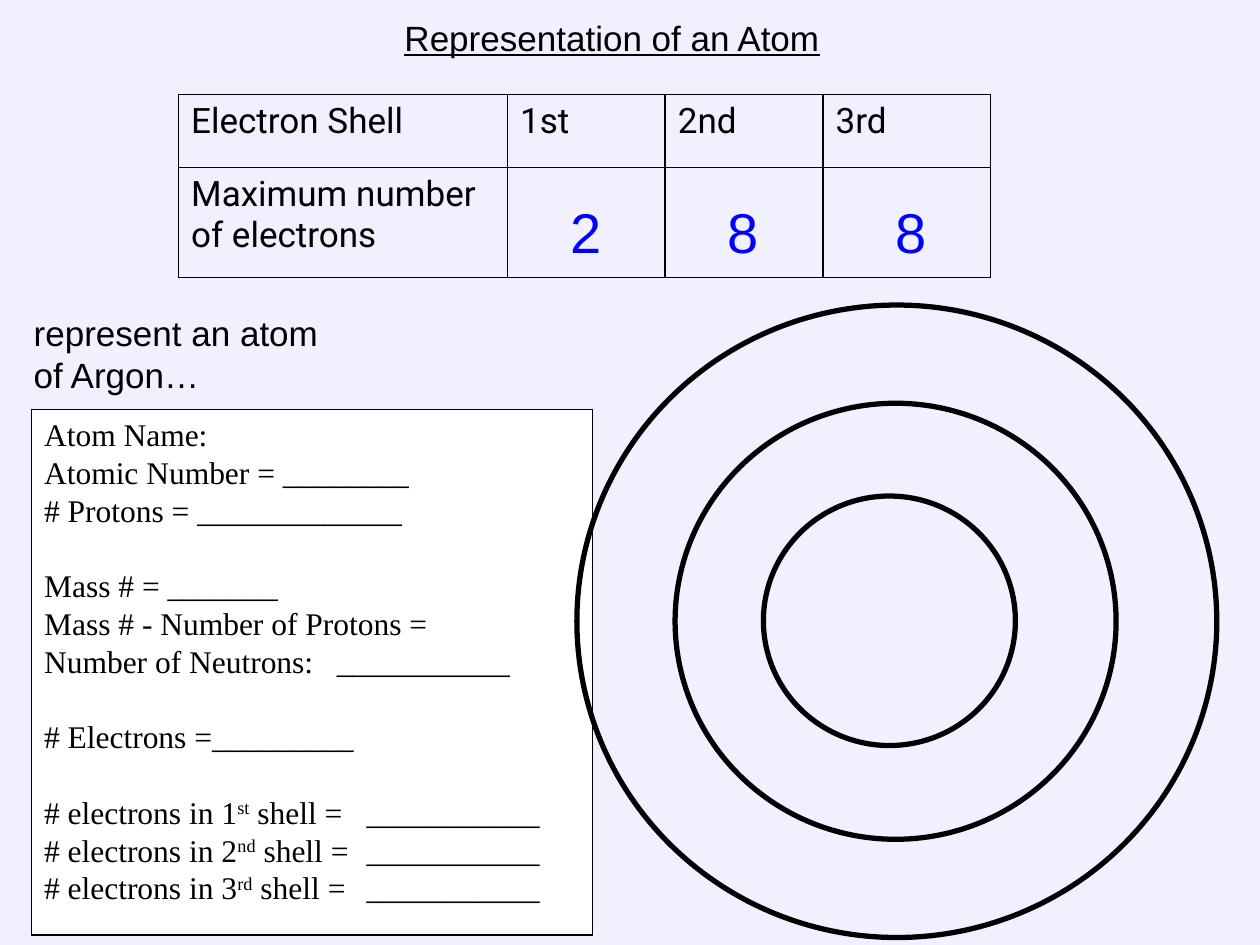
import pptx
import pptx.util
import pptx.dml.color
import pptx.enum.shapes
import pptx.enum.text
import pptx.oxml.ns
import lxml.etree as etree

Cm, Pt = pptx.util.Cm, pptx.util.Pt
SHAPE = pptx.enum.shapes.MSO_SHAPE
INK, BLUE = "000000", "0000FF"


def tint(code):
    return pptx.dml.color.RGBColor.from_string(code)


def sub(node, tag, **attrs):
    return etree.SubElement(node, pptx.oxml.ns.qn(tag), **attrs)


def style(para, size, face, color=INK):
    para.alignment = pptx.enum.text.PP_ALIGN.LEFT
    font = para.font
    font.size, font.name = Pt(size), face
    font.color.rgb = tint(color)


def place(shape, left, top, width, height):
    shape.left, shape.top = Cm(left), Cm(top)
    shape.width, shape.height = Cm(width), Cm(height)


def add_title(slide, text, box):
    title = slide.shapes.title
    place(title, *box)
    frame = title.text_frame
    frame.text = text
    frame.auto_size = pptx.enum.text.MSO_AUTO_SIZE.NONE
    frame.vertical_anchor = pptx.enum.text.MSO_ANCHOR.TOP
    style(frame.paragraphs[0], 20, "Arial")
    frame.paragraphs[0].font.underline = True


def add_label(slide, text, box, size, color=INK, wrap=True):
    frame = slide.shapes.add_textbox(*map(Cm, box)).text_frame
    frame.word_wrap = wrap
    frame.text = text
    style(frame.paragraphs[0], size, "Arial", color)


def add_edges(cell):
    props = cell._tc.get_or_add_tcPr()
    for side in ("a:lnL", "a:lnR", "a:lnT", "a:lnB"):
        line = sub(props, side, w=str(Pt(1)))
        sub(sub(line, "a:solidFill"), "a:srgbClr", val=INK)


def add_grid(slide, rows, box, widths, heights):
    grid = slide.shapes.add_table(len(rows), len(widths), *map(Cm, box)).table
    grid.first_row = grid.horz_banding = False
    for col, width in zip(grid.columns, widths):
        col.width = Cm(width)
    for row, height, texts in zip(grid.rows, heights, rows):
        row.height = Cm(height)
        for cell, text in zip(row.cells, texts):
            add_edges(cell)
            cell.fill.background()
            cell.text = text
            style(cell.text_frame.paragraphs[0], 20, "Roboto")


def add_sheet(slide, lines, box):
    """Each line is (gap before, tab stop or None, text parts); odd parts are raised."""
    sheet = slide.shapes.add_shape(SHAPE.RECTANGLE, *map(Cm, box))
    sheet.shadow.inherit = False
    sheet.fill.solid()
    sheet.fill.fore_color.rgb = tint("FFFFFF")
    sheet.line.color.rgb = tint(INK)
    sheet.line.width = Pt(0.75)
    frame = sheet.text_frame
    frame.word_wrap = True
    frame.vertical_anchor = pptx.enum.text.MSO_ANCHOR.TOP
    for i, (gap, stop, parts) in enumerate(lines):
        para = frame.add_paragraph() if i else frame.paragraphs[0]
        if stop:
            tabs = sub(para._p.get_or_add_pPr(), "a:tabLst")
            sub(tabs, "a:tab", pos=str(Cm(stop)), algn="l")
        para.space_before = Pt(gap)
        style(para, 18, "Times New Roman")
        for j, part in enumerate(parts):
            run = para.add_run()
            run.text = part
            if j % 2:
                run._r.get_or_add_rPr().set("baseline", "30000")


def add_rings(slide, boxes):
    group = slide.shapes.add_group_shape()
    for box in boxes:
        ring = group.shapes.add_shape(SHAPE.OVAL, *map(Cm, box))
        ring.shadow.inherit = False
        ring.fill.background()
        ring.line.color.rgb = tint(INK)
        ring.line.width = Pt(3)


def main():
    deck = pptx.Presentation()
    deck.slide_width, deck.slide_height = Cm(25.4), Cm(19.05)
    slide = deck.slides.add_slide(deck.slide_layouts[5])
    slide.background.fill.solid()
    slide.background.fill.fore_color.rgb = tint("F0F0FF")
    add_title(slide, "Representation of an Atom", (7.9, 0.2, 9.45, 1.1))

    # Shell capacities, with the answers laid over the table
    rows = [("Electron Shell", "1st", "2nd", "3rd"),
            ("Maximum number of electrons", "", "", "")]
    add_grid(slide, rows, (3.6, 1.9, 16.36, 3.7),
             (6.63, 3.18, 3.18, 3.38), (1.48, 2.21))
    for left, count in ((11.25, "2"), (14.42, "8"), (17.81, "8")):
        add_label(slide, count, (left, 3.86, 1.14, 1.6), 32, BLUE, wrap=False)

    # Worksheet
    add_label(slide, "represent an atom of Argon…", (0.43, 6.15, 6.98, 1.96), 20)
    gap = 21.5
    lines = [
        (0, None, ["Atom Name:"]),
        (0, None, ["Atomic Number = ________"]),
        (0, None, ["# Protons = _____________"]),
        (gap, None, ["Mass # = _______"]),
        (0, None, ["Mass # - Number of Protons ="]),
        (0, 5.9, ["Number of Neutrons:\t___________"]),
        (gap, None, ["# Electrons =_________"]),
    ]
    for i, (num, mark) in enumerate((("1", "st"), ("2", "nd"), ("3", "rd"))):
        lines.append((0 if i else gap, 6.5,
                      ["# electrons in " + num, mark, " shell =\t___________"]))
    add_sheet(slide, lines, (0.64, 8.25, 11.3, 10.6))

    # Electron shells
    add_rings(slide, [(11.63, 6.15, 12.9, 12.75),
                      (13.61, 8.13, 8.89, 8.79),
                      (15.39, 10.0, 5.08, 5.03)])
    deck.save("out.pptx")


if __name__ == "__main__":
    main()
